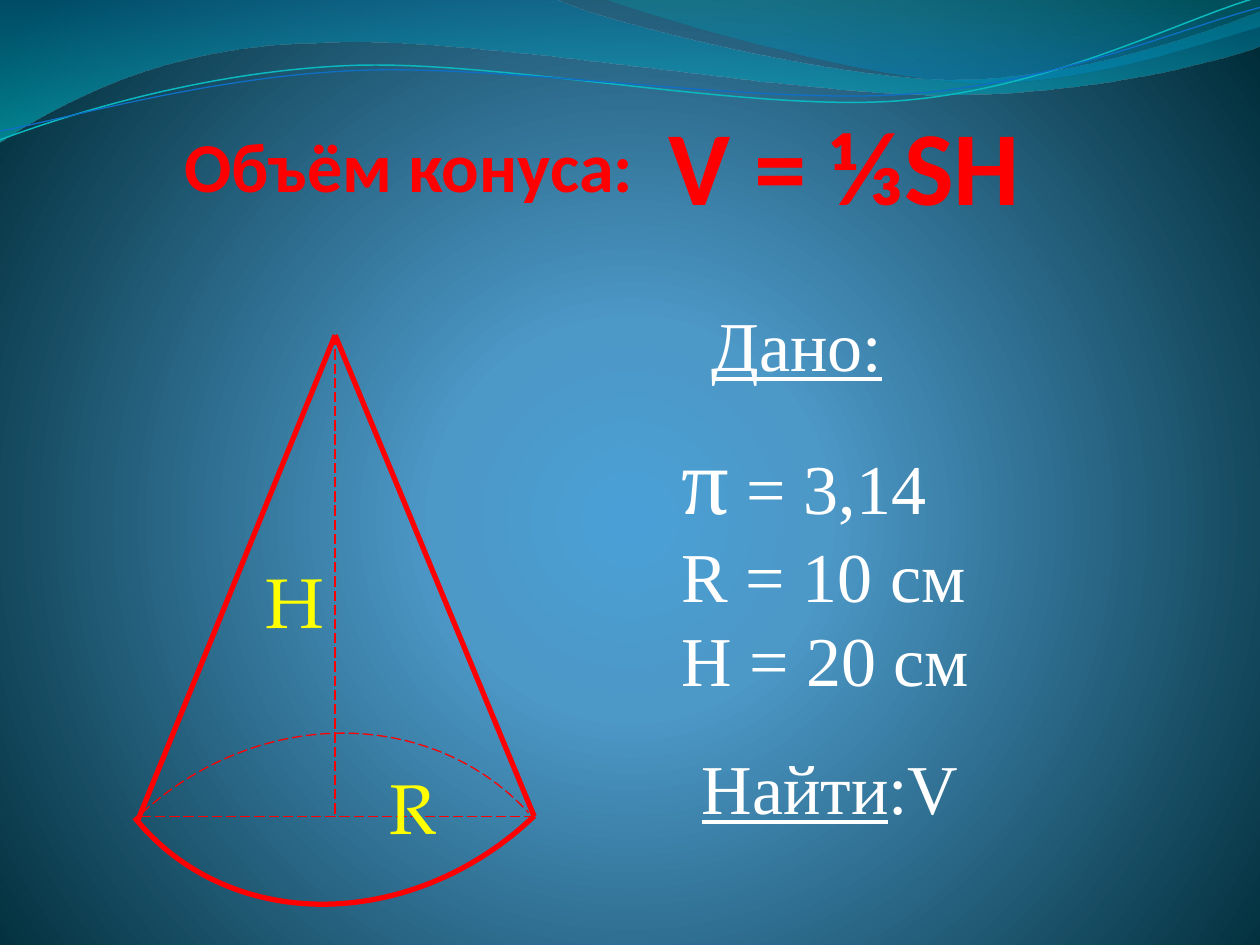
from math import cos, radians, sin

from lxml.etree import SubElement
from pptx import Presentation
from pptx.dml.color import RGBColor
from pptx.enum.dml import MSO_LINE
from pptx.enum.shapes import MSO_CONNECTOR, MSO_SHAPE
from pptx.enum.text import MSO_ANCHOR, MSO_AUTO_SIZE, PP_ALIGN
from pptx.oxml.ns import qn
from pptx.util import Inches, Pt

RED = RGBColor(0xFF, 0x00, 0x00)
WHITE = RGBColor(0xFF, 0xFF, 0xFF)
YELLOW = RGBColor(0xFF, 0xFF, 0x00)
TEAL = RGBColor(0x0A, 0xB8, 0xBF)
BLUE = RGBColor(0x0F, 0x6F, 0xC6)
SANS, SERIF, LABEL = "Calibri", "Times New Roman", "TeX Gyre Pagella"

BACKGROUND = [(0, "4AA0D6", 100), (25, "4C98C7", 100), (100, "002C38", 100)]
BANDS = [
    ([(0, "0074A1", 45), (100, "00C6CF", 55)],
     [(0, -0.01), (4.4, -0.01),
      (4.76, 0.17, 6.64, 0.63, 7.58, 0.63), (8.53, 0.63, 9.58, 0.26, 10, 0.09),
      (10.01, 0.36),
      (9.83, 0.44, 8.7, 0.76, 7.46, 0.75), (6.22, 0.75, 3.82, 0.28, 2.57, 0.34),
      (1.29, 0.35, 0.46, 0.83, -0.01, 1.13)]),
    ([(0, "00A1A9", 30), (80, "008BBF", 45)],
     [(4.79, -0.01),
      (5.09, 0.11, 6.82, 0.62, 7.69, 0.65), (8.56, 0.69, 9.61, 0.32, 10, 0.21),
      (10, 0)]),
]
WAVE_TILT = -2.7
WAVES = [
    (TEAL, 0.85, (4.99, 0.575),
     [(0, 1.11), (0.48, 0.93, 1.58, 0.57, 2.77, 0.52),
      (3.95, 0.47, 5.93, 0.89, 7.13, 0.8), (8.33, 0.71, 9.38, 0.15, 9.98, -0.02)]),
    (BLUE, 0.75, (5, 0.59),
     [(0, 1.04), (0.47, 0.96, 1.64, 0.61, 2.83, 0.56),
      (4.03, 0.51, 5.97, 0.83, 7.17, 0.75), (8.36, 0.67, 9.41, 0.21, 10, 0.06)]),
]

APEX, LEFT, RIGHT, CENTRE = (2.66, 2.66), (1.09, 6.52), (4.24, 6.48), (2.66, 6.48)
SIDES = [(LEFT, APEX), (RIGHT, APEX)]
DASHES = [(APEX, CENTRE), (RIGHT, (LEFT[0], RIGHT[1]))]
ARCS = [((0.53, 2.98, 4.61, 4.06), 136.2, (162, 2.338), 3, False),
        ((0.26, 5.91, 4.53, 4.14), 317.5, (), 0.75, True)]

TITLE = [[("Объём конуса:", 40, False)]]
GIVEN = [[("π", 54, False), (" = 3,14", 40, False)],
         [("R = 10 см", 40, False)],
         [("Н = 20 см", 40, False)]]
FORMULA = ((5.31, 1.02, 3.36, 0.78), [[("V = ⅓SH", 60, False)]])
HEADINGS = [((5.55, 2.34, 1.57, 0.77), [[("Дано:", 40, True)]]),
            ((5.47, 5.86, 2.26, 0.77), [[("Найти", 40, True), (":V", 40, False)]])]
LABELS = [((1.95, 4.38, 0.78, 0.77), [[("H", 40, False)]]),
          ((2.89, 6.02, 0.78, 0.77), [[("R", 40, False)]])]


def inches(values):
    return [Inches(v) for v in values]


def set_stops(grad, stops, circle=False):
    for child in list(grad):
        grad.remove(child)
    gs_lst = SubElement(grad, qn("a:gsLst"))
    for pos, color, alpha in stops:
        gs = SubElement(gs_lst, qn("a:gs"), pos=str(pos * 1000))
        clr = SubElement(gs, qn("a:srgbClr"), val=color)
        if alpha < 100:
            SubElement(clr, qn("a:alpha"), val=str(alpha * 1000))
    if circle:
        path = SubElement(grad, qn("a:path"), path="circle")
        SubElement(path, qn("a:fillToRect"), l="10000", t="110000", r="10000", b="100000")
    else:
        SubElement(grad, qn("a:lin"), ang="5400000", scaled="0")


def turn(segment, pivot, degrees):
    c, d = cos(radians(degrees)), sin(radians(degrees))
    turned = []
    for x, y in zip(segment[::2], segment[1::2]):
        dx, dy = x - pivot[0], y - pivot[1]
        turned += [pivot[0] + dx * c - dy * d, pivot[1] + dx * d + dy * c]
    return turned


def add_curve(s, segments, close):
    start, *rest = [inches(seg) for seg in segments]
    builder = s.shapes.build_freeform(*start)
    points = [p for seg in rest for p in zip(seg[::2], seg[1::2])]
    builder.add_line_segments(points, close=close)
    sp = builder.convert_to_shape()
    sp.shadow.inherit = False
    lines = iter(sp._element.xpath(".//a:lnTo"))
    for seg in rest:
        line = next(lines)
        if len(seg) == 6:
            line.addprevious(curve := line.makeelement(qn("a:cubicBezTo")))
            for part in (line, next(lines), next(lines)):
                curve.append(part[0])
                part.getparent().remove(part)
    return sp


def style_line(sp, color, width, dashed=False):
    sp.line.color.rgb = color
    sp.line.width = Pt(width)
    if dashed:
        sp.line.dash_style = MSO_LINE.LONG_DASH


def add_line(s, begin, end, width, dashed):
    cn = s.shapes.add_connector(MSO_CONNECTOR.STRAIGHT, *inches(begin + end))
    style_line(cn, RED, width, dashed)
    SubElement(cn._element.spPr, qn("a:effectLst"))


def place(sp, box):
    sp.left, sp.top, sp.width, sp.height = inches(box)


def write(sp, paragraphs, font, color, bold=False, align=PP_ALIGN.LEFT, wrap=True):
    tf = sp.text_frame
    tf.word_wrap = wrap
    tf.auto_size = MSO_AUTO_SIZE.NONE
    for i, runs in enumerate(paragraphs):
        p = tf.paragraphs[0] if i == 0 else tf.add_paragraph()
        p.alignment = align
        p.space_before = Pt(0)
        for text, size, underline in runs:
            r = p.add_run()
            r.text = text
            r.font.name, r.font.size, r.font.bold = font, Pt(size), bold
            r.font.underline = underline
            r.font.color.rgb = color


def anchor_bottom(sp):
    tf = sp.text_frame
    tf.vertical_anchor = MSO_ANCHOR.BOTTOM
    tf.margin_left = tf.margin_top = tf.margin_right = tf.margin_bottom = 0


def main():
    """Build the cone volume slide."""
    prs = Presentation()
    prs.slide_width, prs.slide_height = Inches(10), Inches(7.5)
    s = prs.slides.add_slide(prs.slide_layouts[1])
    s.background.fill.gradient()
    set_stops(s._element.xpath(".//p:bg//a:gradFill")[0], BACKGROUND, circle=True)

    for stops, segments in BANDS:
        band = add_curve(s, segments, True)
        band.line.fill.background()
        band.fill.gradient()
        set_stops(band._element.spPr.find(qn("a:gradFill")), stops)
    for color, width, pivot, segments in WAVES:
        wave = add_curve(s, [turn(seg, pivot, -WAVE_TILT) for seg in segments], False)
        wave.rotation = WAVE_TILT
        wave.fill.background()
        style_line(wave, color, width)

    for begin, end in SIDES:
        add_line(s, begin, end, 3, False)
    for box, rotation, angles, width, dashed in ARCS:
        arc = s.shapes.add_shape(MSO_SHAPE.ARC, *inches(box))
        arc.shadow.inherit = False
        arc.rotation = rotation
        for i, angle in enumerate(angles):
            arc.adjustments[i] = angle
        arc.fill.background()
        style_line(arc, RED, width, dashed)
    for begin, end in DASHES:
        add_line(s, begin, end, 0.75, True)

    title, body = s.shapes.title, s.placeholders[1]
    place(title, (0.94, 0.86, 4.61, 0.78))
    write(title, TITLE, SANS, RED, True, PP_ALIGN.CENTER)
    anchor_bottom(title)
    place(body, (5.31, 3.28, 2.66, 2.36))
    write(body, GIVEN, SERIF, WHITE)
    for p in body.text_frame.paragraphs:
        pPr = p._p.get_or_add_pPr()
        pPr.set("marL", "0")
        pPr.set("indent", "0")
        SubElement(pPr, qn("a:buNone"))

    box, paragraphs = FORMULA
    formula = s.shapes.add_textbox(*inches(box))
    write(formula, paragraphs, SANS, RED, True)
    anchor_bottom(formula)
    for box, paragraphs in HEADINGS:
        write(s.shapes.add_textbox(*inches(box)), paragraphs, SERIF, WHITE, wrap=False)
    for box, paragraphs in LABELS:
        write(s.shapes.add_textbox(*inches(box)), paragraphs, LABEL, YELLOW, align=PP_ALIGN.CENTER)

    prs.save("out.pptx")


if __name__ == "__main__":
    main()
